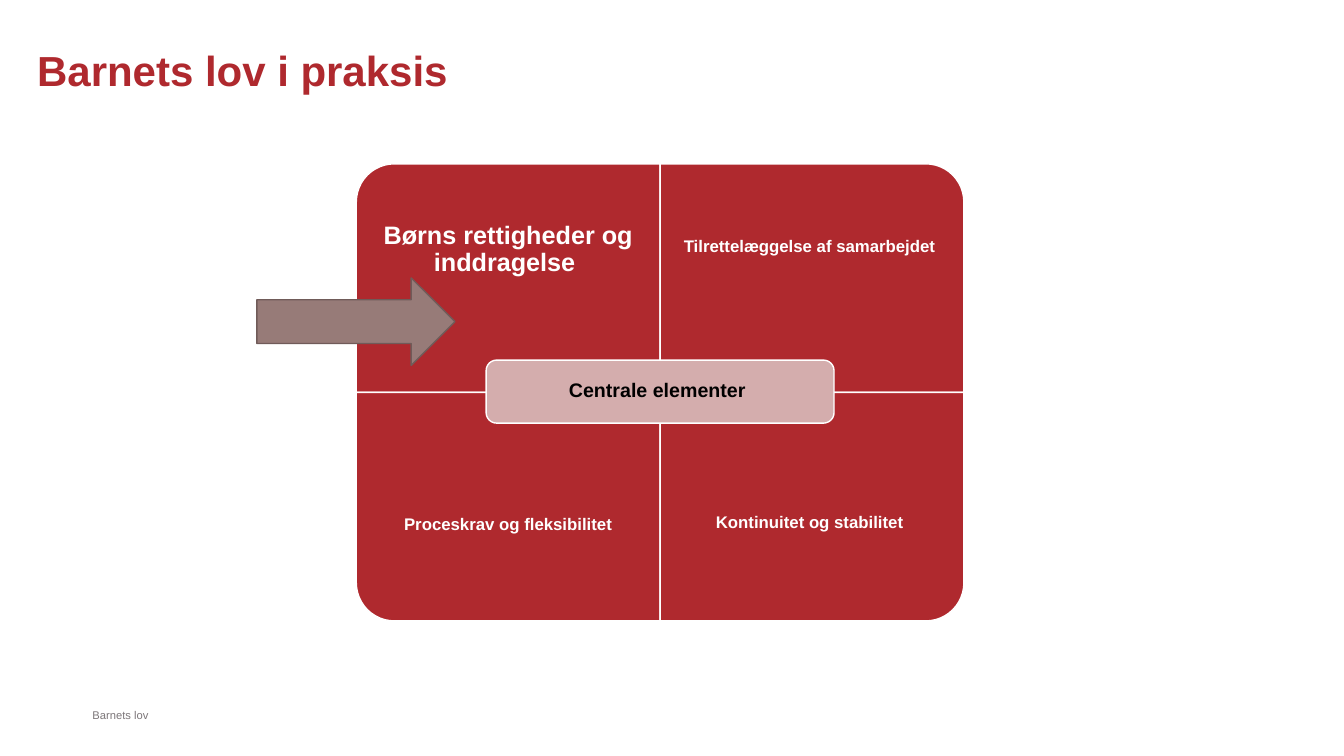
from dataclasses import dataclass

from pptx import Presentation
from pptx.dml.color import RGBColor
from pptx.enum.shapes import MSO_SHAPE
from pptx.enum.text import MSO_ANCHOR, PP_ALIGN
from pptx.util import Pt


@dataclass(frozen=True)
class Theme:
    font: str = "Arial"
    red: str = "AF292E"
    pink: str = "D4ADAD"
    white: str = "FFFFFF"
    black: str = "000000"
    gray: str = "7C7679"
    arrow: str = "977B78"
    arrow_line: str = "705B59"
    title: int = 30
    focus: int = 18
    center: int = 14
    label: int = 12
    footer: int = 8


T = Theme()

QUADRANTS = [
    ("Børns rettigheder og inddragelse ", T.focus, 270, 0),
    ("Tilrettelæggelse af samarbejdet ", T.label, 0, -2),
    ("Proceskrav og fleksibilitet", T.label, 180, -7),
    ("Kontinuitet og stabilitet ", T.label, 90, -9),
]


def set_attrs(obj, values):
    for name, value in values.items():
        setattr(obj, name, value)


def add_text(s, box, text, size, color, bold=True, inset=0,
             anchor=MSO_ANCHOR.MIDDLE, align=PP_ALIGN.CENTER):
    tf = s.shapes.add_textbox(*map(Pt, box)).text_frame
    sides = ("left", "top", "right", "bottom")
    set_attrs(tf, {f"margin_{side}": Pt(inset) for side in sides})
    set_attrs(tf, {"word_wrap": True, "vertical_anchor": anchor})
    p = tf.paragraphs[0]
    set_attrs(p, {"alignment": align, "line_spacing": 0.9})
    r = p.add_run()
    r.text = text
    set_attrs(r.font, {"name": T.font, "size": Pt(size), "bold": bold})
    r.font.color.rgb = RGBColor.from_string(color)


def add_block(s, kind, box, fill, line, turn=0):
    x, y, w, h = box
    if turn % 180:
        x, y, w, h = x + (w - h) / 2, y + (h - w) / 2, h, w
    sp = s.shapes.add_shape(kind, *map(Pt, (x, y, w, h)))
    sp.shadow.inherit = False
    sp.rotation = turn
    sp.fill.solid()
    sp.fill.fore_color.rgb = RGBColor.from_string(fill)
    sp.line.color.rgb = RGBColor.from_string(line)
    sp.line.width = Pt(1)


def add_title(s, box):
    add_text(s, box, "Barnets lov i praksis", T.title, T.red,
             anchor=MSO_ANCHOR.TOP, align=PP_ALIGN.LEFT)


def add_matrix(s, box):
    x, y, w, h = box
    cell_w, cell_h = w / 2, h / 2
    text_h = cell_h * 0.75
    for i, (text, size, turn, shift) in enumerate(QUADRANTS):
        row, col = divmod(i, 2)
        cx, cy = x + col * cell_w, y + row * cell_h
        add_block(s, MSO_SHAPE.ROUND_1_RECTANGLE, (cx, cy, cell_w, cell_h),
                  T.red, T.white, turn)
        top = cy + row * (cell_h - text_h) + shift
        add_text(s, (cx, top, cell_w, text_h), text, size, T.white, inset=6.5)
    hub_w, hub_h = 248.5, 45
    hub = (x + (w - hub_w) / 2, y + (h - hub_h) / 2 - 0.5, hub_w, hub_h)
    add_block(s, MSO_SHAPE.ROUNDED_RECTANGLE, hub, T.pink, T.white)
    add_text(s, hub, "Centrale elementer ", T.center, T.black, inset=6.5)


def add_arrow(s, box):
    add_block(s, MSO_SHAPE.RIGHT_ARROW, box, T.arrow, T.arrow_line)


def add_footer(s, box):
    add_text(s, box, "Barnets lov", T.footer, T.gray, bold=False,
             anchor=MSO_ANCHOR.BOTTOM, align=PP_ALIGN.LEFT)


def main():
    prs = Presentation()
    set_attrs(prs, {"slide_width": Pt(960), "slide_height": Pt(540)})
    s = prs.slides.add_slide(prs.slide_layouts[6])
    add_title(s, (26.5, 36, 510.5, 48))
    add_matrix(s, (254.5, 117, 434, 326.5))
    add_footer(s, (66, 501, 377, 14.5))
    add_arrow(s, (183.5, 198.5, 141.5, 62.5))
    prs.save("out.pptx")


if __name__ == "__main__":
    main()
